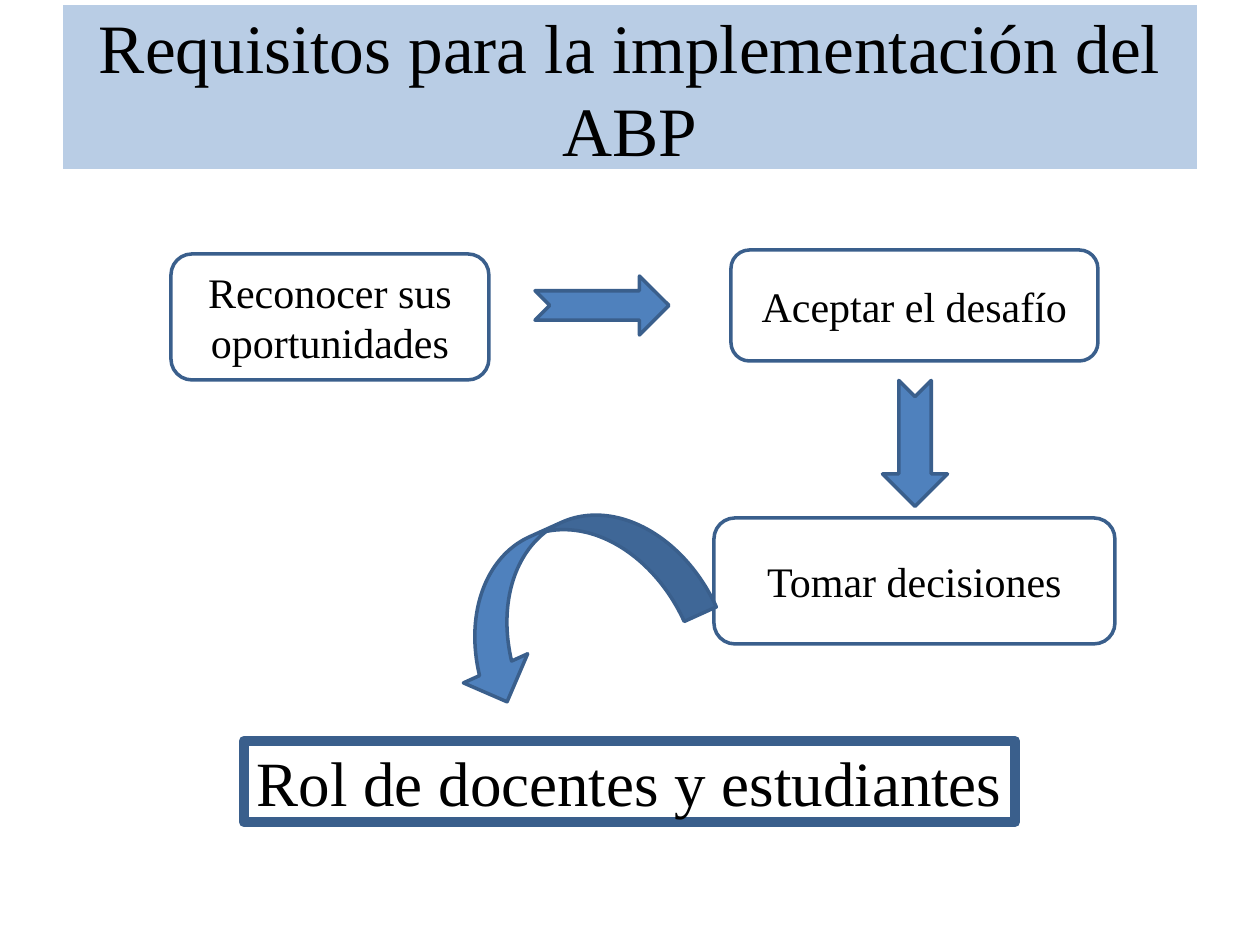
from pptx import Presentation
from pptx import util as u
from pptx.dml.color import RGBColor
from pptx.enum import shapes, text

SCALE = 914400 / 126
BLACK = RGBColor(0x00, 0x00, 0x00)
PALE_BLUE = RGBColor(0xB9, 0xCD, 0xE5)
BLUE = RGBColor(0x4F, 0x81, 0xBD)
DARK_BLUE = RGBColor(0x3A, 0x5F, 0x8C)
KIND = shapes.MSO_SHAPE


def px(value):
    return u.Emu(round(value * SCALE))


def write(shape, wording, size, wrap=True):
    frame = shape.text_frame
    frame.text = wording
    frame_format = {
        "word_wrap": wrap,
        "auto_size": text.MSO_AUTO_SIZE.NONE,
        "vertical_anchor": text.MSO_ANCHOR.MIDDLE,
    }
    for name, value in frame_format.items():
        setattr(frame, name, value)
    paragraph = frame.paragraphs[0]
    paragraph.alignment = text.PP_ALIGN.CENTER
    font = paragraph.runs[0].font
    for name, value in {"name": "Times New Roman", "size": u.Pt(size)}.items():
        setattr(font, name, value)
    font.color.rgb = BLACK


presentation = Presentation()
presentation.slide_width = px(1260)
presentation.slide_height = px(945)
slide = presentation.slides.add_slide(presentation.slide_layouts[5])

title = slide.shapes.title
title_place = {"left": 63, "top": 5, "width": 1134, "height": 164}
for name, value in title_place.items():
    setattr(title, name, px(value))
title.fill.solid()
title.fill.fore_color.rgb = PALE_BLUE
write(title, "Requisitos para la implementación del ABP", 39.6)

boxes = [
    (KIND.ROUNDED_RECTANGLE, (171, 254, 318, 126), "Reconocer sus oportunidades", 24, 2, True),
    (KIND.ROUNDED_RECTANGLE, (731, 250, 367, 111), "Aceptar el desafío", 24, 2, True),
    (KIND.ROUNDED_RECTANGLE, (714, 518, 401, 126), "Tomar decisiones", 24, 2, True),
    (KIND.RECTANGLE, (244, 741, 771, 81), "Rol de docentes y estudiantes", 36, 6, False),
]
for kind, place, wording, size, line_width, wrap in boxes:
    box = slide.shapes.add_shape(kind, *map(px, place))
    box.shadow.inherit = False
    box.fill.background()
    box.line.color.rgb = DARK_BLUE
    box.line.width = u.Pt(line_width)
    write(box, wording, size, wrap)

arrows = [
    (KIND.NOTCHED_RIGHT_ARROW, (535, 276, 134, 59), 0),
    (KIND.NOTCHED_RIGHT_ARROW, (852, 411, 126, 65), 90),
    (KIND.CURVED_RIGHT_ARROW, (496, 465, 141, 265), 65.6),
]
for kind, place, rotation in arrows:
    arrow = slide.shapes.add_shape(kind, *map(px, place))
    arrow.shadow.inherit = False
    arrow.rotation = rotation
    arrow.fill.solid()
    arrow.fill.fore_color.rgb = BLUE
    arrow.line.color.rgb = DARK_BLUE
    arrow.line.width = u.Pt(2)

presentation.save("out.pptx")
